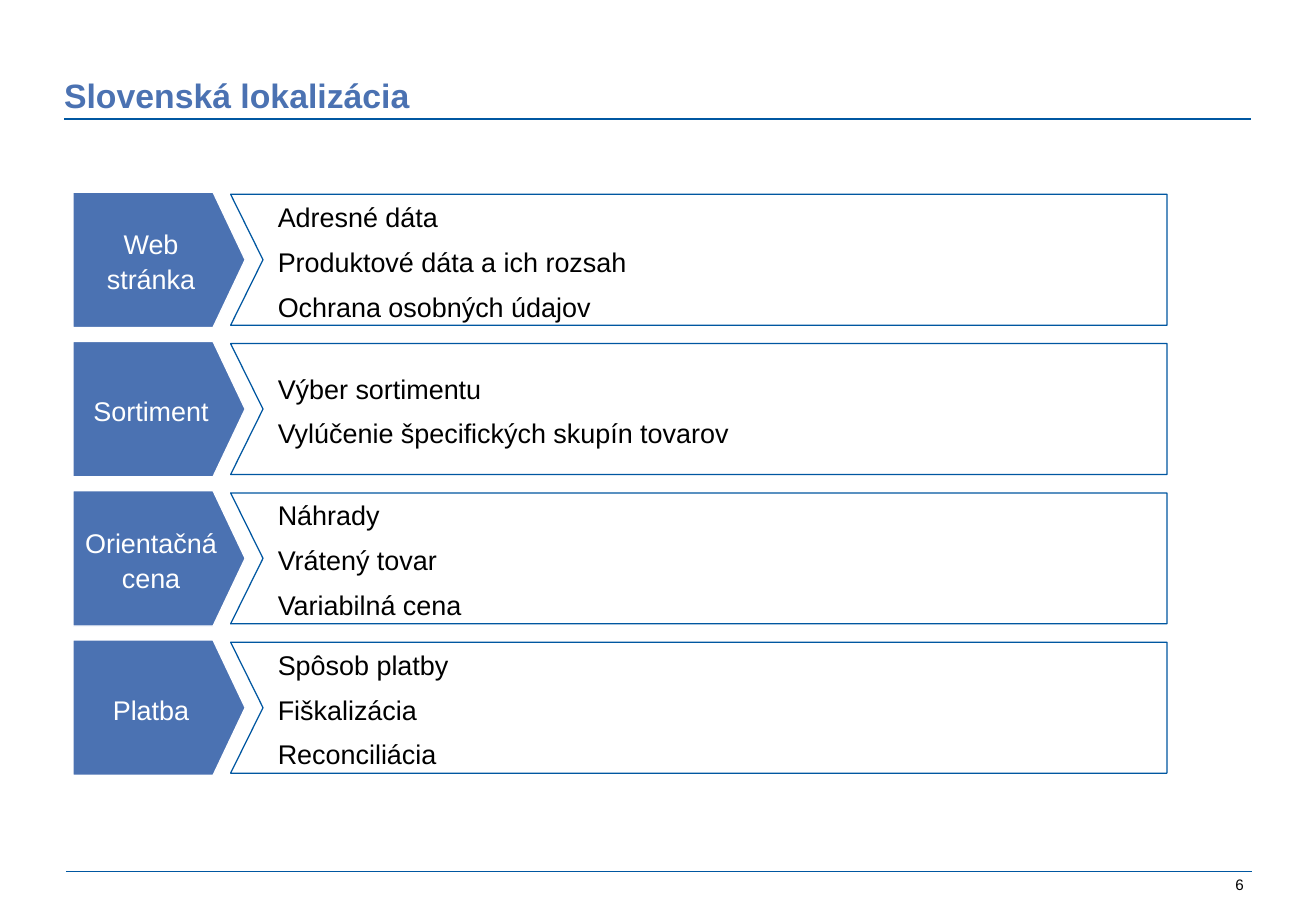
from pptx import Presentation, util as u
from pptx.dml.color import RGBColor
from pptx.enum import shapes, text
from pptx.oxml.ns import qn
from lxml import etree

COLORS = {"blue": "4B72B2", "line": "0057A1", "white": "FFFFFF", "black": "000000"}
FRAME = {"word_wrap": True, "auto_size": text.MSO_AUTO_SIZE.NONE}
LEFT, CENTER, RIGHT = text.PP_ALIGN.LEFT, text.PP_ALIGN.CENTER, text.PP_ALIGN.RIGHT
MIDDLE, BOTTOM = text.MSO_ANCHOR.MIDDLE, text.MSO_ANCHOR.BOTTOM

ROWS = [
    ("Web stránka", ["Adresné dáta", "Produktové dáta a ich rozsah", "Ochrana osobných údajov"]),
    ("Sortiment", ["Výber sortimentu", "Vylúčenie špecifických skupín tovarov"]),
    ("Orientačná cena", ["Náhrady", "Vrátený tovar", "Variabilná cena"]),
    ("Platba", ["Spôsob platby", "Fiškalizácia", "Reconciliácia"]),
]
ROW_TOP, ROW_PITCH = 113.9, 88.5


def color(name):
    return RGBColor.from_string(COLORS[name])


def assign(target, values):
    for name, value in values.items():
        setattr(target, name, value)


class Deck:
    font = "Arial"

    def __init__(self, width, height):
        self.prs = Presentation()
        self.prs.slide_width, self.prs.slide_height = u.Pt(width), u.Pt(height)
        self.s = self.prs.slides.add_slide(self.prs.slide_layouts[6])

    def add_text(self, sp, lines, size, fill, align=LEFT, anchor=MIDDLE,
                 insets=(7.2, 3.6), bold=False, spacing=1.0, indent=0):
        tf = sp.text_frame
        x, y = map(u.Pt, insets)
        assign(tf, {**FRAME, "vertical_anchor": anchor, "margin_left": x,
                    "margin_right": x, "margin_top": y, "margin_bottom": y})
        for i, line in enumerate(lines):
            p = tf.paragraphs[0] if i == 0 else tf.add_paragraph()
            assign(p, {"alignment": align, "line_spacing": spacing,
                       "space_before": u.Pt(5.5 if i else 0)})
            if indent:
                p._p.get_or_add_pPr().set("marL", str(u.Pt(indent)))
            r = p.add_run()
            r.text = line
            assign(r.font, {"name": self.font, "size": u.Pt(size), "bold": bold})
            r.font.color.rgb = color(fill)

    def paint(self, sp, fill, line):
        sp.shadow.inherit = False
        sp.fill.solid()
        sp.fill.fore_color.rgb = color(fill)
        sp.line.color.rgb = color(line)
        sp.line.width = u.Pt(0.75)

    def label(self, box, line, **style):
        sp = self.s.shapes.add_textbox(*map(u.Pt, box))
        self.add_text(sp, [line], **style)

    def rule(self, x1, x2, y, width):
        ln = self.s.shapes.add_connector(
            shapes.MSO_CONNECTOR.STRAIGHT, *map(u.Pt, (x1, y, x2, y)))
        ln.line.color.rgb = color("line")
        ln.line.width = u.Pt(width)
        etree.SubElement(ln._element.spPr, qn("a:effectLst"))

    def panel(self, x, y, w, h, notch, lines):
        points = [(x, y), (x + notch, y + h / 2), (x, y + h), (x + w, y + h)]
        fb = self.s.shapes.build_freeform(u.Pt(x + w), u.Pt(y))
        fb.add_line_segments([(u.Pt(a), u.Pt(b)) for a, b in points], close=True)
        sp = fb.convert_to_shape()
        self.paint(sp, "white", "line")
        self.add_text(sp, lines, 16, "black", spacing=1.1, indent=20.9)

    def pentagon(self, x, y, w, h, line):
        sp = self.s.shapes.add_shape(
            shapes.MSO_SHAPE.PENTAGON, *map(u.Pt, (x, y, w, h)))
        sp.adjustments[0] = 0.237
        self.paint(sp, "blue", "white")
        self.add_text(sp, [line], 16, "white", align=CENTER,
                      insets=(5.76, 5.76), spacing=1.1)


def main():
    deck = Deck(780, 540)
    deck.label((699, 517, 43.2, 15), "6", size=9, fill="black",
               align=RIGHT, anchor=BOTTOM, insets=(5, 2.2))
    deck.rule(38, 741.6, 70.5, 1.5)
    deck.rule(39, 742.2, 516.6, 0.75)
    deck.label((38, 26.6, 703, 41.8), "Slovenská lokalizácia", size=20,
               fill="blue", anchor=BOTTOM, insets=(0, 0), bold=True)
    for i, (topic, lines) in enumerate(ROWS):
        y = ROW_TOP + i * ROW_PITCH
        deck.panel(136.7, y + 1.3, 555, 77.6, 19.2, lines)
        deck.pentagon(43.3, y, 102, 80.2, topic)
    deck.prs.save("out.pptx")


if __name__ == "__main__":
    main()
